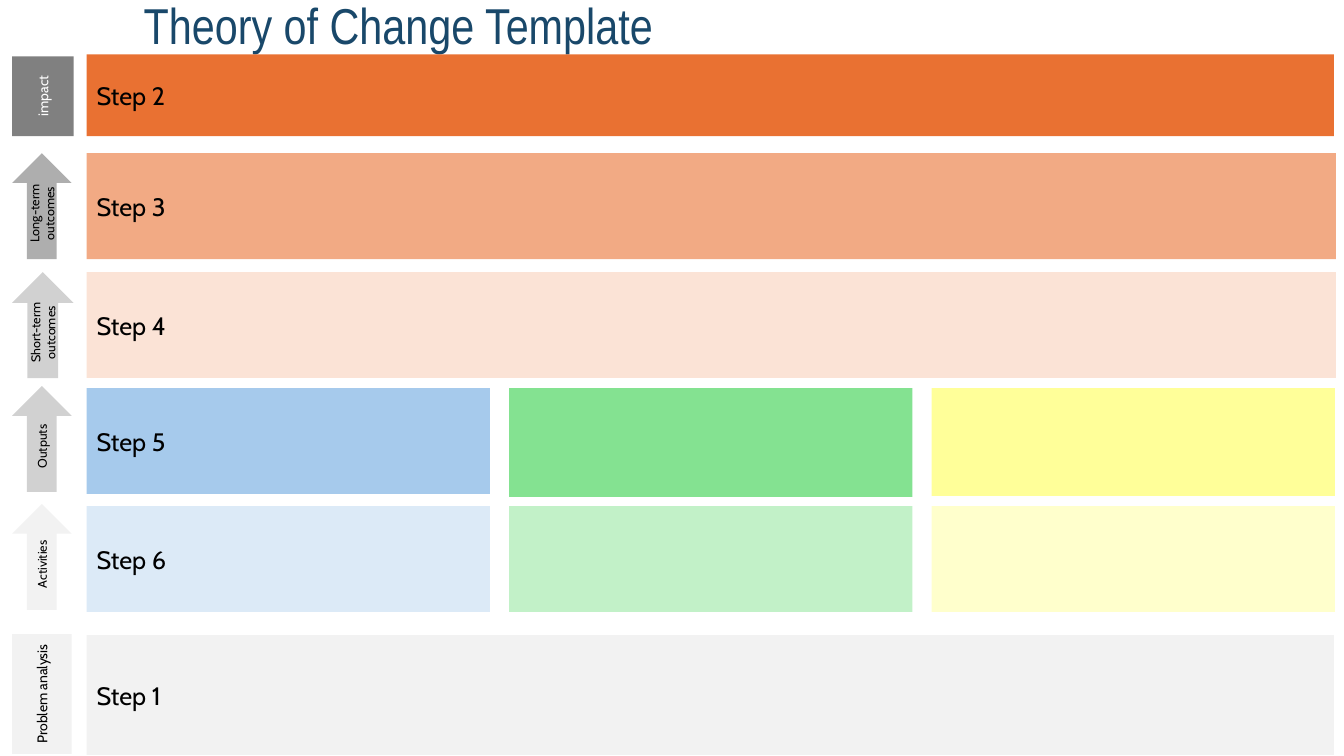
from pptx import Presentation
from pptx.dml.color import RGBColor
from pptx.enum.shapes import MSO_SHAPE as Shape
from pptx.enum.text import MSO_ANCHOR as Anchor, PP_ALIGN as Align
from pptx.util import Pt

PX = 9144  # 100 px to the inch
TITLE = " Theory of Change Template"
BOX, ARROW = Shape.RECTANGLE, Shape.UP_ARROW

# text, kind, top, width, height, fill, font size, font colour
TAGS = [
    ("impact", BOX, 56, 61, 79, "808080", 10, "FFFFFF"),
    ("Long-term outcomes", ARROW, 152, 59, 105, "AEAEAE", 9, "000000"),
    ("Short-term outcomes", ARROW, 270, 61, 105, "D1D1D1", 9, "000000"),
    ("Outputs", ARROW, 383, 59, 105, "D1D1D1", 9, "000000"),
    ("Activities", ARROW, 500, 59, 105, "F2F2F2", 9, "000000"),
    ("Problem analysis", BOX, 629, 59, 119, "F2F2F2", 10, "000000"),
]
# text, top, width, fills and heights from left to right
BANDS = [
    ("Step 2", 54, 1237, [("E97132", 81)]),
    ("Step 3", 152, 1239, [("F2AA84", 105)]),
    ("Step 4", 270, 1239, [("FBE3D6", 105)]),
    ("Step 5", 385, 400, [("A6CAEC", 105), ("84E291", 108), ("FFFF99", 107)]),
    ("Step 6", 502, 400, [("DCEAF7", 105), ("C2F1C8", 105), ("FFFFCC", 105)]),
    ("Step 1", 630, 1237, [("F2F2F2", 119)]),
]
TAG_X, BAND_X, STEP = 12, 86, 419


def rgb(code):
    return RGBColor.from_string(code)


def write(shape, text, size, color, font="Cabin", align=Align.LEFT):
    frame = shape.text_frame
    frame.word_wrap = True
    frame.vertical_anchor = Anchor.MIDDLE
    frame.text = text
    para = frame.paragraphs[0]
    para.alignment = align
    face = para.runs[0].font
    face.name, face.size = font, Pt(size)
    face.color.rgb = rgb(color)
    return para


def block(kind, x, y, w, h, fill):
    shape = slide.shapes.add_shape(kind, x * PX, y * PX, w * PX, h * PX)
    shape.shadow.inherit = False
    shape.fill.solid()
    shape.fill.fore_color.rgb = rgb(fill)
    shape.line.fill.background()
    return shape


deck = Presentation()
deck.slide_width, deck.slide_height = 1333 * PX, 750 * PX
slide = deck.slides.add_slide(deck.slide_layouts[6])

title = slide.shapes.add_textbox(122 * PX, 12 * PX, 1014 * PX, 32 * PX)
write(title, TITLE, 36, "19486A", "Arial Narrow").line_spacing = 0.9

for text, kind, y, w, h, fill, size, color in TAGS:
    tag = block(kind, TAG_X, y, w, h, fill)
    write(tag, text, size, color, align=Align.CENTER)
    tag.element.txBody.bodyPr.set("vert", "vert270")

for text, y, w, parts in BANDS:
    for col, (fill, h) in enumerate(parts):
        band = block(BOX, BAND_X + col * STEP, y, w, h, fill)
        if col == 0:
            write(band, text, 18, "000000")

deck.save("out.pptx")
